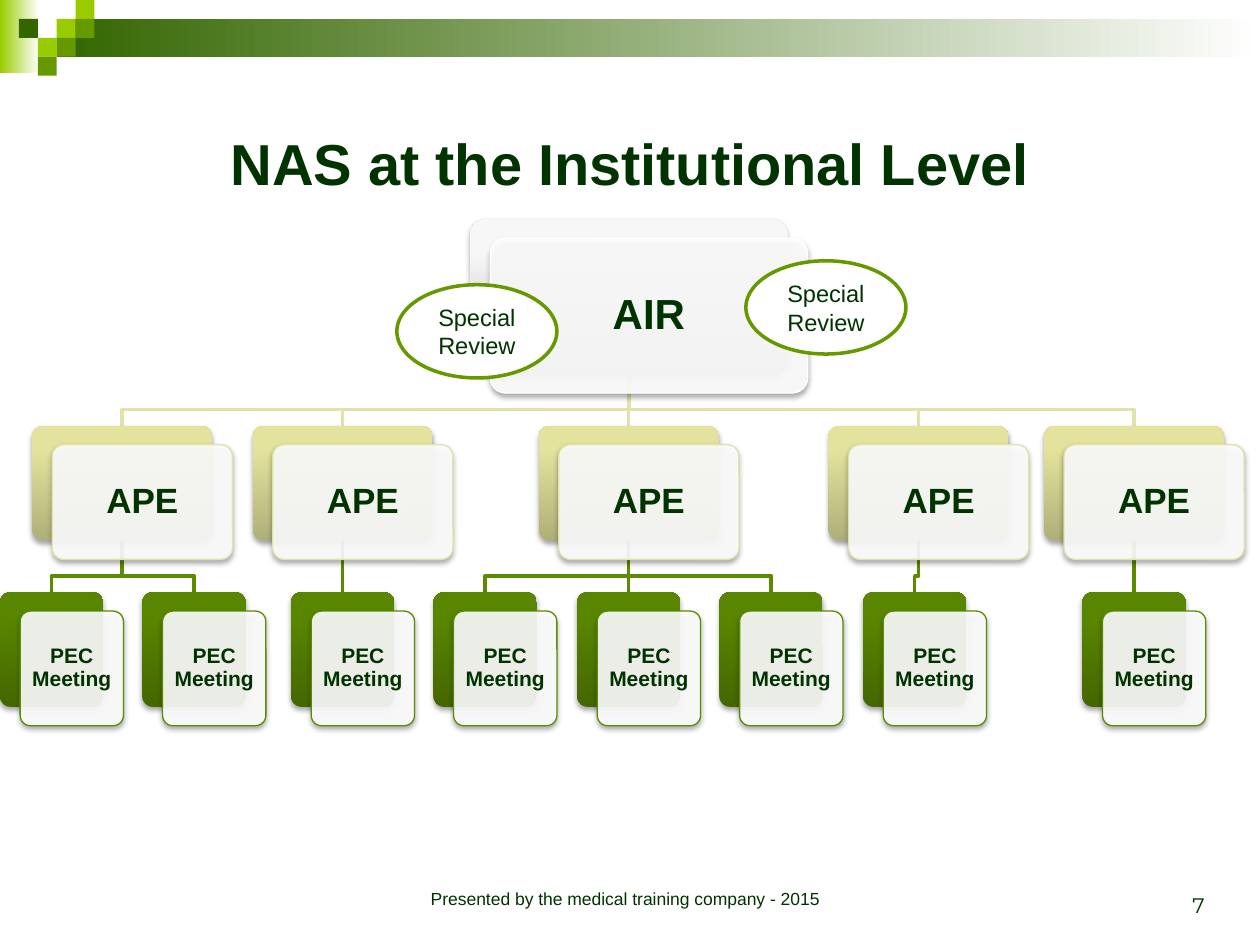
from lxml import etree
from pptx import Presentation
from pptx import util as u
from pptx.dml.color import RGBColor
from pptx.enum import shapes, text
from pptx.oxml.ns import qn

KIND = shapes.MSO_SHAPE
ANCHOR = text.MSO_ANCHOR
ALIGN = text.PP_ALIGN
INK, WHITE = "003300", "FFFFFF"
LIME, LEAF, MOSS = "99CC00", "669900", "336600"
SAND, GRASS = "E2E2AA", "5C8A00"


def color(value):
    return RGBColor.from_string(value)


def write(frame, words, size, bold=False, font="Arial", align=ALIGN.CENTER,
          anchor=ANCHOR.TOP, pitch=None, inset=None):
    """Fill a text frame; each line of words becomes a paragraph."""
    frame.text = words
    frame.word_wrap = True
    frame.auto_size = text.MSO_AUTO_SIZE.NONE
    frame.vertical_anchor = anchor
    if inset is not None:
        frame.margin_left = frame.margin_right = u.Inches(inset)
        frame.margin_top = frame.margin_bottom = u.Inches(inset)
    for para in frame.paragraphs:
        para.alignment = align
        if pitch:
            para.line_spacing = pitch
        for run in para.runs:
            run.font.name, run.font.size, run.font.bold = font, u.Pt(size), bold
            run.font.color.rgb = color(INK)


class Chart:
    def __init__(self, slide):
        self.slide = slide
        self.items = slide.shapes

    def shape(self, kind, left, top, wide, high, fill=None, line=None, weight=1):
        item = self.items.add_shape(kind, *map(u.Inches, (left, top, wide, high)))
        item.shadow.inherit = False
        if fill:
            item.fill.solid()
            item.fill.fore_color.rgb = color(fill)
        if line:
            item.line.color.rgb = color(line)
            item.line.width = u.Pt(weight)
        else:
            item.line.fill.background()
        return item

    def blend(self, item, first, last, angle=0, end=1):
        item.fill.gradient()
        item.fill.gradient_angle = angle
        for stop, tone, place in zip(item.fill.gradient_stops, (first, last), (0, end)):
            stop.color.rgb = color(tone)
            stop.position = place

    def shade(self, item):
        effects = item._element.spPr.find(qn("a:effectLst"))
        drop = etree.SubElement(effects, qn("a:outerShdw"), blurRad="39370",
                                dist="22860", dir="5400000", rotWithShape="0")
        tone = etree.SubElement(drop, qn("a:srgbClr"), val="000000")
        etree.SubElement(tone, qn("a:alpha"), val="35000")

    def card(self, words, mid, top, wide, high, size, inset, tones, edge):
        """Draw a shaded back card with a pale front card; return the back one."""
        left = mid - wide / 2
        back = self.shape(KIND.ROUNDED_RECTANGLE, left, top, wide, high)
        self.blend(back, *tones, angle=90, end=0.8)
        front = self.shape(KIND.ROUNDED_RECTANGLE, left + 0.16, top + 0.15,
                           wide, high, WHITE, edge, 0.75)
        tone = front._element.spPr.find(qn("a:solidFill"))[0]
        etree.SubElement(tone, qn("a:alpha"), val="90000")
        for item in (back, front):
            item.adjustments[0] = 0.1
            self.shade(item)
        write(front.text_frame, words, size, bold=True, anchor=ANCHOR.MIDDLE,
              pitch=0.9, inset=inset)
        return back

    def link(self, head, child, tone):
        """Join two cards behind all others, straight or with an elbow."""
        from_x, to_x = (box.left + box.width // 2 for box in (head, child))
        from_y, to_y = head.top + head.height, child.top
        if abs(from_x - to_x) < u.Inches(0.01):
            line = self.items.add_connector(shapes.MSO_CONNECTOR.STRAIGHT,
                                            from_x, from_y, to_x, to_y)
            line.begin_connect(head, 2)
            line.end_connect(child, 0)
            etree.SubElement(line._element.spPr, qn("a:effectLst"))
        else:
            bend = from_y + u.Inches(0.28)
            pen = self.items.build_freeform(from_x, from_y)
            pen.add_line_segments([(from_x, bend), (to_x, bend), (to_x, to_y)],
                                  close=False)
            line = pen.convert_to_shape()
            line.fill.background()
            line.shadow.inherit = False
        line.line.color.rgb = color(tone)
        line.line.width = u.Pt(2)
        self.items._spTree.insert(2, line._element)

    def label(self, words, left, top, wide, high, size, **look):
        box = self.items.add_textbox(*map(u.Inches, (left, top, wide, high)))
        write(box.text_frame, words, size, **look)


def main():
    deck = Presentation()
    deck.slide_width, deck.slide_height = u.Inches(10), u.Inches(7.5)
    chart = Chart(deck.slides.add_slide(deck.slide_layouts[5]))

    # Title
    title = chart.items.title
    title.left, title.top = u.Inches(0.69), u.Inches(1.03)
    title.width, title.height = u.Inches(8.62), u.Inches(1.09)
    write(title.text_frame, "NAS at the Institutional Level", 33, bold=True, pitch=0.9)

    # Header bands and squares on a 0.15 inch grid
    for place, tone in (((0, 0, 0.31, 0.58), LIME), ((0.45, 0.15, 9.55, 0.3), MOSS)):
        chart.blend(chart.shape(KIND.RECTANGLE, *place), tone, WHITE)
    unit = 0.15
    for col, row, tone in ((3, 1, LIME), (4, 0, LIME), (4, 1, LEAF), (2, 2, LIME),
                           (1, 1, MOSS), (3, 2, LEAF), (2, 3, LEAF)):
        chart.shape(KIND.RECTANGLE, col * unit, row * unit, unit, unit, tone)

    # Tree: centre of each APE card, then the centres of its meetings
    tree = ((0.97, (0.41, 1.54)), (2.72, (2.72,)), (4.99, (3.85, 4.99, 6.12)),
            (7.29, (7.26,)), (9, (9,)))
    root = chart.card("AIR", 4.99, 1.74, 2.52, 1.23, 24, 0.13,
                      ("BEBEBE", "F7F7F7"), WHITE)
    for mid, kids in tree:
        node = chart.card("APE", mid, 3.38, 1.43, 0.91, 20, 0.11,
                          ("AFAF79", "E3E39D"), SAND)
        chart.link(root, node, SAND)
        for kid in kids:
            leaf = chart.card("PEC Meeting", kid, 4.7, 0.82, 0.91, 12, 0.07,
                              ("456700", "598600"), GRASS)
            chart.link(node, leaf, GRASS)

    # Special reviews
    for left, top in ((3.15, 2.26), (5.92, 2.07)):
        oval = chart.shape(KIND.OVAL, left, top, 1.27, 0.74, WHITE, LEAF, 2)
        write(oval.text_frame, "Special\nReview", 13.5, anchor=ANCHOR.MIDDLE)

    # Footer
    chart.label("Presented by the medical training company - 2015",
                2.75, 7, 4.42, 0.33, 10)
    chart.label("7", 7.33, 6.83, 2.33, 0.5, 12, font="Montserrat",
                align=ALIGN.RIGHT, anchor=ANCHOR.BOTTOM)

    deck.save("out.pptx")


if __name__ == "__main__":
    main()
